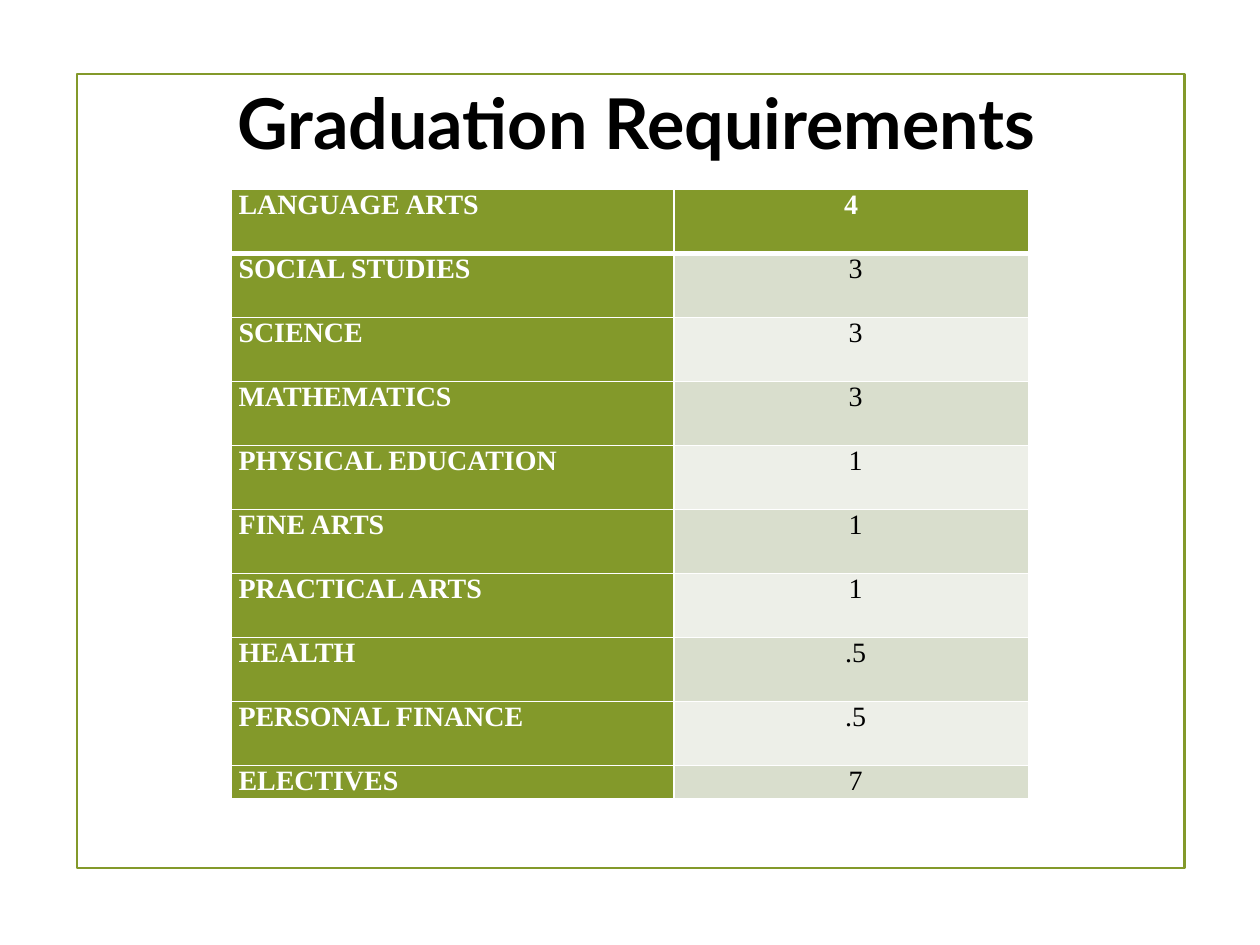
import pptx
import pptx.dml.color
import pptx.enum.shapes
import pptx.enum.text
import pptx.util
from lxml import etree

Cm = pptx.util.Cm
Pt = pptx.util.Pt
COLORS = {
    "olive": "83992A",
    "band_dark": "D9DECD",
    "band_light": "EDEFE8",
    "white": "FFFFFF",
    "black": "000000",
}
REQUIREMENTS = [
    ("LANGUAGE ARTS", "4"),
    ("SOCIAL STUDIES", "3"),
    ("SCIENCE", "3"),
    ("MATHEMATICS", "3"),
    ("PHYSICAL EDUCATION", "1"),
    ("FINE ARTS", "1"),
    ("PRACTICAL ARTS", "1"),
    ("HEALTH", ".5"),
    ("PERSONAL FINANCE", ".5"),
    ("ELECTIVES", "7"),
]
DRAWING = "http://schemas.openxmlformats.org/drawingml/2006/main"


def color(name):
    return pptx.dml.color.RGBColor.from_string(COLORS[name])


def write(frame, text, *, font, size, ink, bold=False, align="LEFT"):
    para = frame.paragraphs[0]
    para.alignment = getattr(pptx.enum.text.PP_ALIGN, align)
    span = para.add_run()
    span.text = text
    span.font.name = font
    span.font.size = Pt(size)
    span.font.bold = bold
    span.font.color.rgb = color(ink)


deck = pptx.Presentation()
deck.slide_width = Cm(25.4)
deck.slide_height = Cm(19.05)
page = deck.slides.add_slide(deck.slide_layouts[6])

border = page.shapes.add_shape(
    pptx.enum.shapes.MSO_SHAPE.RECTANGLE, Cm(1.55), Cm(1.5), Cm(22.33), Cm(16)
)
border.shadow.inherit = False
border.fill.background()
border.line.color.rgb = color("olive")
border.line.width = Pt(1.25)

title = page.shapes.add_textbox(Cm(3.38), Cm(0.64), Cm(18.9), Cm(3.63))
title.text_frame.word_wrap = True
title.text_frame.vertical_anchor = pptx.enum.text.MSO_ANCHOR.MIDDLE
write(title.text_frame, "Graduation Requirements", font="Lato", size=40,
      ink="black", bold=True, align="CENTER")

table = page.shapes.add_table(
    len(REQUIREMENTS), 2, Cm(4.66), Cm(3.82), Cm(16.07), Cm(12.24)
).table
table.horz_banding = False
table.columns[0].width = Cm(8.93)
table.columns[1].width = Cm(7.14)

for row, requirement in enumerate(REQUIREMENTS):
    header = row == 0
    last = row == len(REQUIREMENTS) - 1
    table.rows[row].height = Cm(0.63 if last else 1.29)
    for column, text in enumerate(requirement):
        cell = table.cell(row, column)
        strong = header or column == 0
        cell.margin_left = Cm(0.15 if strong else 0.33)
        cell.margin_right = Cm(0.15)
        cell.margin_top = cell.margin_bottom = Cm(0)
        write(cell.text_frame, text, font="Times New Roman", size=16,
              ink="white" if strong else "black", bold=strong,
              align="CENTER" if column else "LEFT")

        properties = cell._tc.get_or_add_tcPr()
        for side in "LRTB":
            thick = (header and side == "B") or (row == 1 and side == "T")
            edge = etree.SubElement(properties, f"{{{DRAWING}}}ln{side}",
                                    w=str(Pt(3 if thick else 1)))
            paint = etree.SubElement(edge, f"{{{DRAWING}}}solidFill")
            etree.SubElement(paint, f"{{{DRAWING}}}srgbClr", val=COLORS["white"])

        band = "band_dark" if row % 2 else "band_light"
        cell.fill.solid()
        cell.fill.fore_color.rgb = color("olive" if strong else band)

deck.save("out.pptx")
